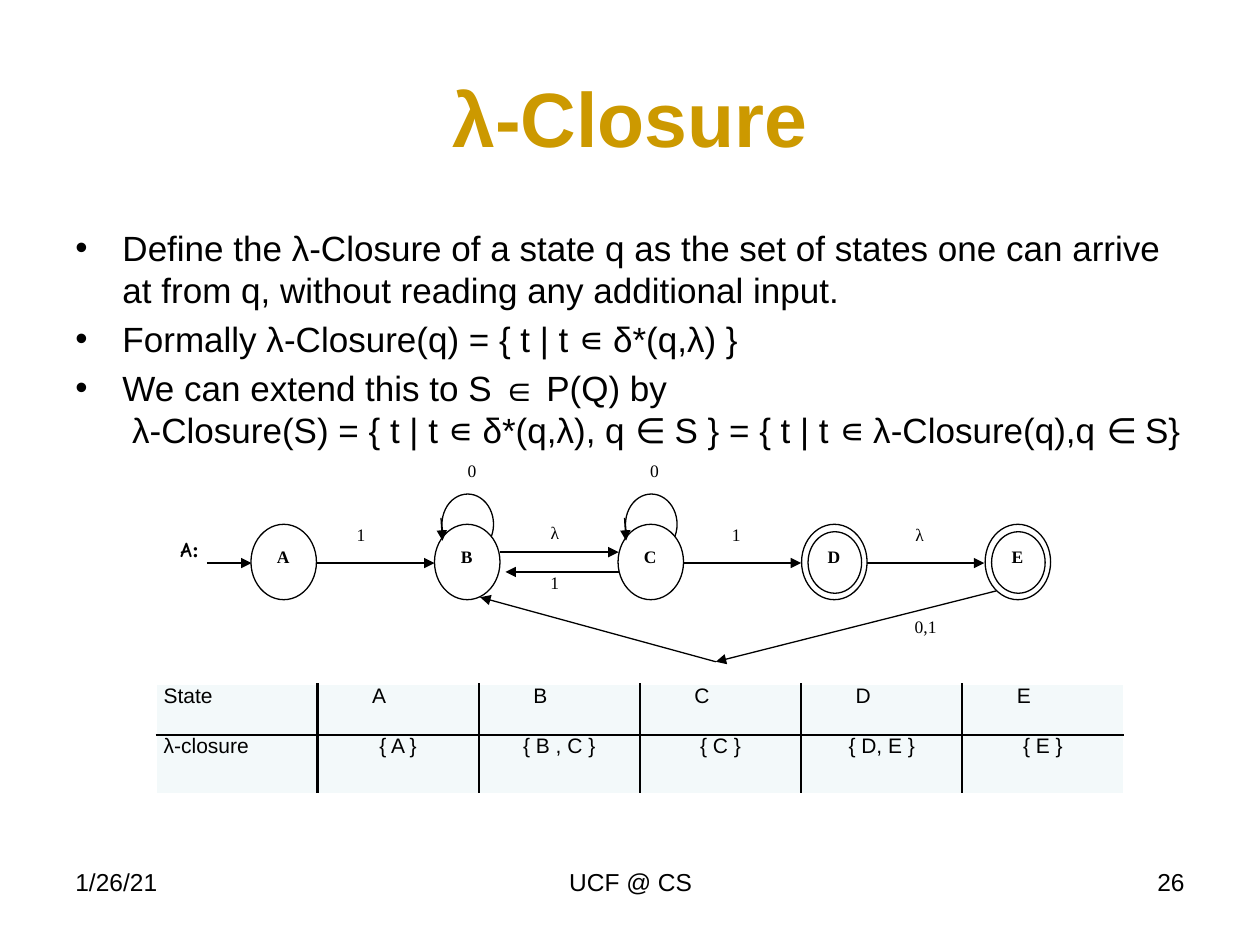
from typing import NamedTuple

from lxml.etree import SubElement
from pptx import Presentation
from pptx.dml.color import RGBColor
from pptx.enum.shapes import MSO_CONNECTOR, MSO_SHAPE
from pptx.enum.text import MSO_ANCHOR, PP_ALIGN
from pptx.oxml.ns import qn
from pptx.util import Cm, Pt

BLACK = RGBColor(0, 0, 0)
WHITE = RGBColor(255, 255, 255)
GOLD = RGBColor(0xCC, 0x99, 0x00)
PALE = RGBColor(0xF3, 0xF9, 0xFA)
SANS, SERIF, COMIC = "Arial", "Times New Roman", "Comic Neue"
LEFT, MID, RIGHT = PP_ALIGN.LEFT, PP_ALIGN.CENTER, PP_ALIGN.RIGHT


class State(NamedTuple):
    name: str
    loop: bool = False
    final: bool = False


class Edge(NamedTuple):
    x1: float
    y1: float
    x2: float
    y2: float


class Label(NamedTuple):
    text: str
    x: float
    y: float
    w: float = 0.53
    align: PP_ALIGN = MID


STATES = [State("A"), State("B", loop=True), State("C", loop=True),
          State("D", final=True), State("E", final=True)]
LEFT_X, STEP, TOP, WIDE, HIGH = 5.06, 3.7, 10.57, 1.32, 1.52
AXIS = 11.35

EDGES = [
    Edge(4.17, AXIS, 5.07, AXIS),
    Edge(6.38, AXIS, 8.76, AXIS),
    Edge(10.08, 11.13, 12.47, 11.13),
    Edge(12.47, 11.53, 10.19, 11.53),
    Edge(13.77, AXIS, 16.15, AXIS),
    Edge(17.48, AXIS, 19.84, AXIS),
    Edge(20.09, 11.91, 14.43, 13.34),
    Edge(14.43, 13.34, 9.68, 12.04),
]
LABELS = [
    Label("0", 9.25, 9.27), Label("0", 12.93, 9.27),
    Label("1", 7.19, 10.57, align=LEFT),
    Label("λ", 10.92, 10.52), Label("1", 10.92, 11.53),
    Label("1", 14.58, 10.57), Label("λ", 18.03, 10.57, 1.02),
    Label("0,1", 18.14, 12.42, 1.04),
]
POINTS = [
    ["Define the λ-Closure of a state q as the set of states one can "
     "arrive at from q, without reading any additional input."],
    ["Formally λ-Closure(q) = { t | t ∊ δ*(q,λ) }"],
    ["We can extend this to S ∈ P(Q) by",
     " λ-Closure(S) = { t | t ∊ δ*(q,λ), q ∈ S } = "
     "{ t | t ∊ λ-Closure(q),q ∈ S}"],
]
FOOTS = [Label("1/26/21", 1.27, 17.35, 5.92, LEFT),
         Label("UCF @ CS", 8.69, 17.35, 8.05),
         Label("26", 18.21, 17.35, 5.92, RIGHT)]
ROWS = [["State", "A", "B", "C", "D", "E"],
        ["λ-closure", "{ A }", "{ B , C }", "{ C }", "{ D, E }", "{ E }"]]


def add_run(para, text: str, size: float, face: str = SANS,
            bold: bool = False, tint: RGBColor = BLACK) -> None:
    run = para.add_run()
    run.text = text
    font = run.font
    font.size, font.name, font.bold = Pt(size), face, bold
    font.color.rgb = tint


def add_box(slide, x: float, y: float, w: float, h: float,
            align: PP_ALIGN = LEFT, pad: bool = True):
    frame = slide.shapes.add_textbox(Cm(x), Cm(y), Cm(w), Cm(h)).text_frame
    frame.word_wrap = True
    if not pad:
        frame.margin_left = frame.margin_right = 0
        frame.margin_top = frame.margin_bottom = 0
    frame.paragraphs[0].alignment = align
    return frame


def add_oval(slide, x: float, y: float, w: float, h: float) -> None:
    oval = slide.shapes.add_shape(MSO_SHAPE.OVAL, Cm(x), Cm(y), Cm(w), Cm(h))
    oval.shadow.inherit = False
    oval.fill.solid()
    oval.fill.fore_color.rgb = WHITE
    oval.line.color.rgb = BLACK
    oval.line.width = Pt(0.75)


def add_edge(slide, edge: Edge) -> None:
    link = slide.shapes.add_connector(
        MSO_CONNECTOR.STRAIGHT, *(Cm(value) for value in edge))
    link.line.color.rgb = BLACK
    link.line.width = Pt(0.75)
    SubElement(link.line._get_or_add_ln(), qn("a:tailEnd"), type="triangle")
    SubElement(link._element.spPr, qn("a:effectLst"))


def add_state(slide, state: State, x: float) -> None:
    if state.loop:
        add_oval(slide, x + 0.15, 9.96, 1.04, 1.22)
    add_oval(slide, x, TOP, WIDE, HIGH)
    if state.final:
        add_oval(slide, x + 0.13, TOP + 0.15, 1.08, 1.24)
    if state.loop:
        add_edge(slide, Edge(x + 0.13, 10.44, x + 0.16, 10.9))
    frame = add_box(slide, x + 0.15, 10.88, 1, 0.97, MID)
    add_run(frame.paragraphs[0], state.name, 10, SERIF, True)


def set_edges(cell, row: int, col: int) -> None:
    props = cell._tc.get_or_add_tcPr()
    outer = {"L": col == 0, "R": col == len(ROWS[0]) - 1,
             "T": row == 0, "B": row == len(ROWS) - 1}
    for side, rim in outer.items():
        width = Pt(1) if rim else Pt(1.5)
        line = SubElement(props, qn(f"a:ln{side}"), w=str(width))
        fill = SubElement(line, qn("a:solidFill"))
        SubElement(fill, qn("a:srgbClr"), val=str(WHITE if rim else BLACK))


def add_grid(slide) -> None:
    grid = slide.shapes.add_table(2, 6, Cm(3.15), Cm(13.79),
                                  Cm(19.5), Cm(2.21)).table
    for row, high in zip(grid.rows, (1.02, 1.19)):
        row.height = Cm(high)
    for r, texts in enumerate(ROWS):
        for c, text in enumerate(texts):
            cell = grid.cell(r, c)
            set_edges(cell, r, c)
            cell.fill.solid()
            cell.fill.fore_color.rgb = PALE
            cell.margin_left = cell.margin_right = Cm(0.15)
            cell.margin_top = cell.margin_bottom = 0
            para = cell.text_frame.paragraphs[0]
            para.alignment = MID if r and c else LEFT
            if c and not r:
                props = para._p.get_or_add_pPr()
                props.set("marL", str(Cm(0.95)))
                props.set("indent", "0")
            add_run(para, text, 12)


def add_points(slide) -> None:
    frame = add_box(slide, 1.27, 4.45, 22.86, 12.57)
    for i, lines in enumerate(POINTS):
        para = frame.add_paragraph() if i else frame.paragraphs[0]
        props = para._p.get_or_add_pPr()
        props.set("marL", str(Cm(0.95)))
        props.set("indent", str(-Cm(0.95)))
        SubElement(props, qn("a:buFont"), typeface=SANS)
        SubElement(props, qn("a:buChar"), char="•")
        if i:
            para.space_before = Pt(4)
        for k, text in enumerate(lines):
            if k:
                para.add_line_break()
            add_run(para, text, 20)


def main() -> None:
    deck = Presentation()
    deck.slide_width, deck.slide_height = Cm(25.4), Cm(19.05)
    slide = deck.slides.add_slide(deck.slide_layouts[5])

    # Title and bullets
    title = slide.shapes.title
    title.left, title.top = Cm(1.27), Cm(0.76)
    title.width, title.height = Cm(22.86), Cm(3.18)
    title.text_frame.vertical_anchor = MSO_ANCHOR.MIDDLE
    head = title.text_frame.paragraphs[0]
    head.alignment = MID
    add_run(head, "λ-Closure", 44, bold=True, tint=GOLD)
    add_points(slide)

    # Automaton
    for i, state in enumerate(STATES):
        add_state(slide, state, LEFT_X + i * STEP)
    for edge in EDGES:
        add_edge(slide, edge)
    for label in LABELS:
        frame = add_box(slide, label.x, label.y, label.w, 0.64,
                        label.align, pad=False)
        add_run(frame.paragraphs[0], label.text, 10, SERIF)
    name = add_box(slide, 3.23, 10.69, 1.19, 0.97, MID).paragraphs[0]
    add_run(name, "A", 12, COMIC, True)
    add_run(name, ":", 12, SERIF, True)

    # Closure table and footer
    add_grid(slide)
    for foot in FOOTS:
        frame = add_box(slide, foot.x, foot.y, foot.w, 1.32, foot.align)
        add_run(frame.paragraphs[0], foot.text, 14)

    deck.save("out.pptx")


if __name__ == "__main__":
    main()
